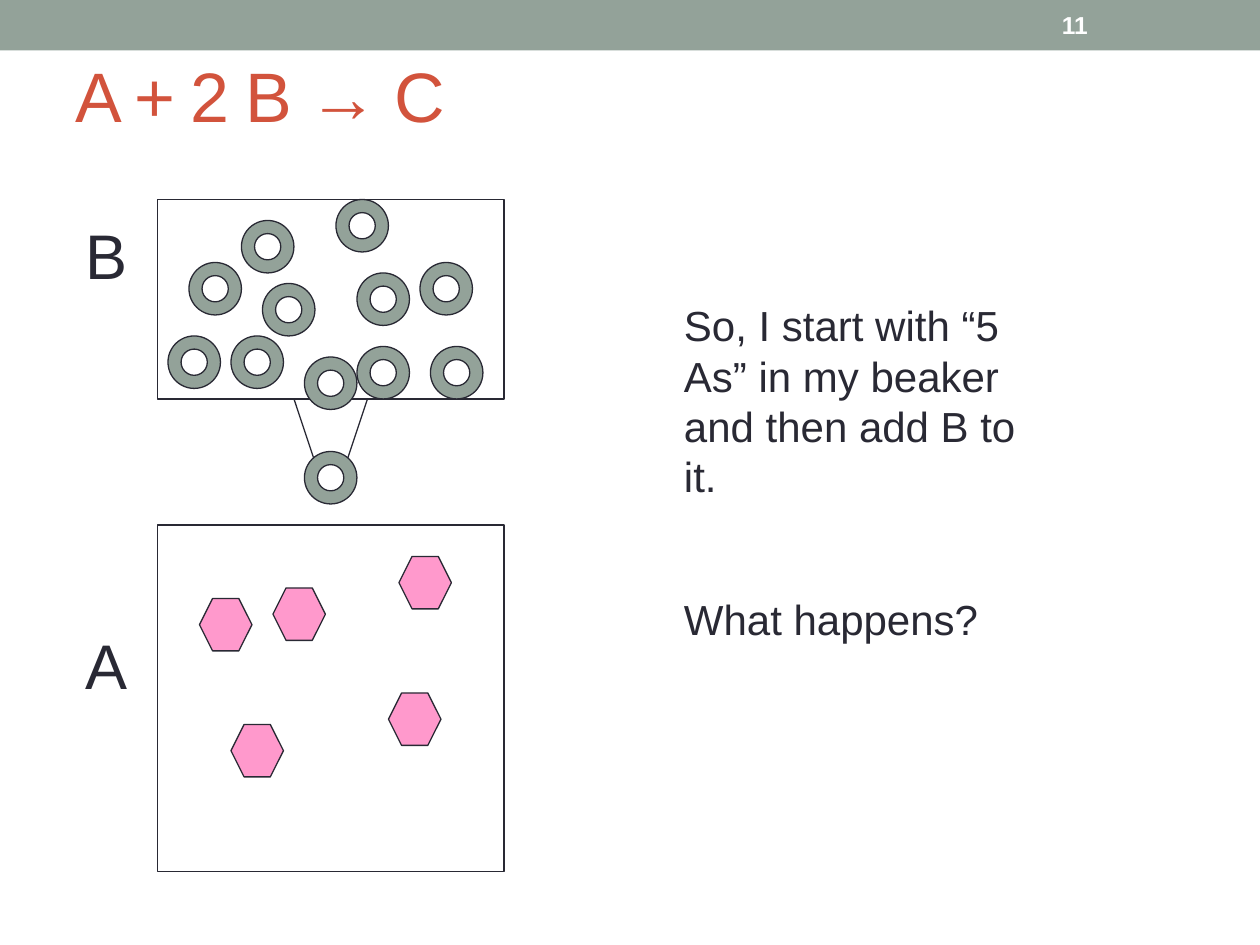
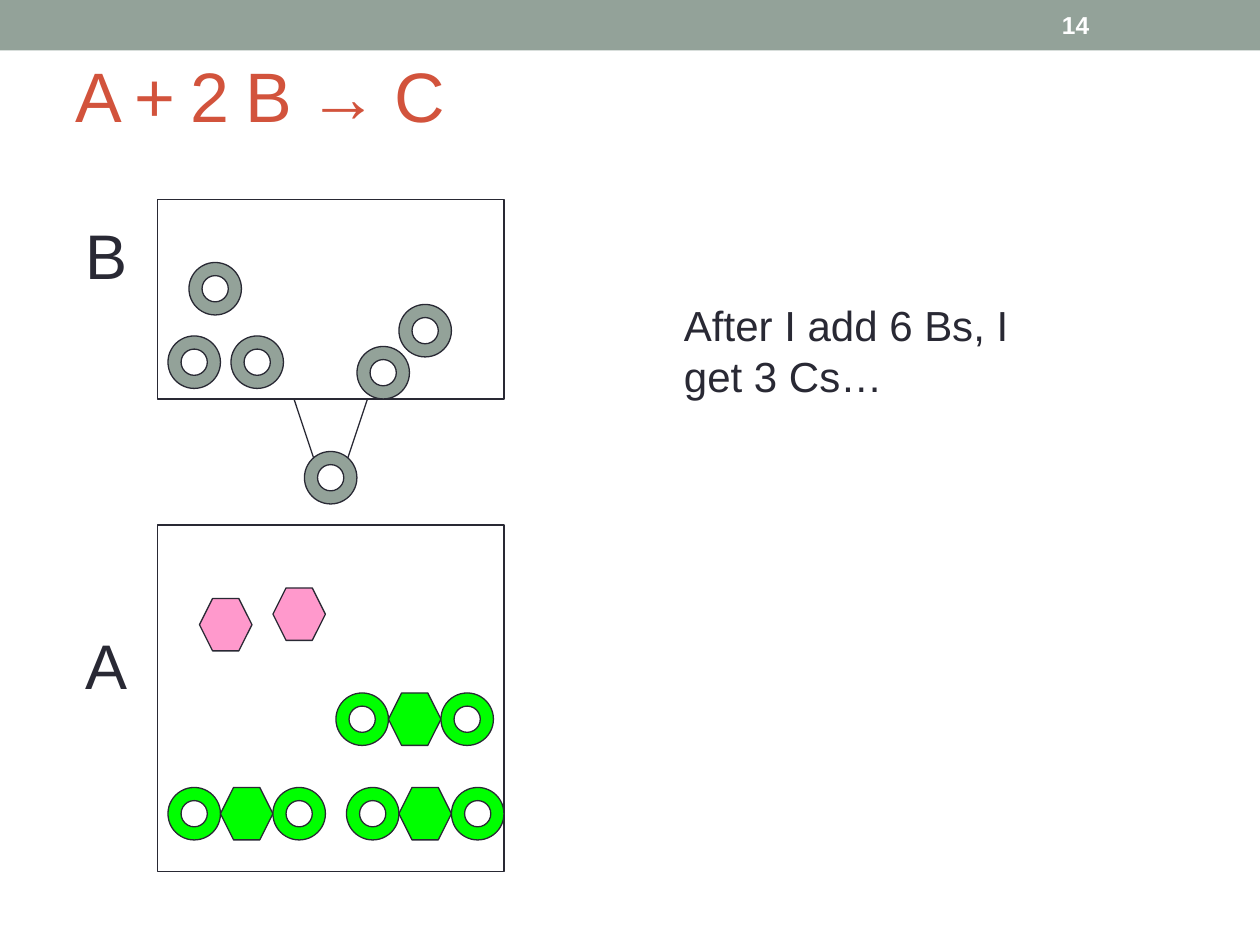
from pptx import Presentation
from pptx.dml.color import RGBColor
from pptx.enum.shapes import MSO_SHAPE
from pptx.enum.text import MSO_ANCHOR
from pptx.util import Inches, Pt

COLORS = {
    "band": "93A299",
    "title": "D2533C",
    "ink": "292934",
    "reactant_a": "FF99CC",
    "reactant_b": "93A299",
    "product_c": "00FF00",
    "white": "FFFFFF",
}
GRID = 12
PARTICLE = 5

SLIDES = [
    {
        "number": "11",
        "text": ["So, I start with “5 As” in my beaker and then add B to it.", "What happens?"],
        "b": [(25, 27), (16, 32), (41, 33), (22, 32), (40, 25), (29, 34),
              (34, 33), (18, 25), (32, 19), (23, 21), (34, 26)],
        "a": [(19, 57), (26, 56), (38, 53), (22, 69), (37, 66)],
        "c": [],
    },
    {
        "number": "14",
        "text": ["After I add 6 Bs, I get 3 Cs…"],
        "b": [(16, 32), (22, 32), (34, 33), (18, 25), (38, 29)],
        "a": [(19, 57), (26, 56)],
        "c": [(16, 75), (32, 66), (33, 75)],
    },
]


def add_figure(slide, kind, x, y, w, h, fill=None, line="ink"):
    sp = slide.shapes.add_shape(kind, *[Inches(v / GRID) for v in (x, y, w, h)])
    sp.shadow.inherit = False
    if fill:
        sp.fill.solid()
        sp.fill.fore_color.rgb = RGBColor.from_string(COLORS[fill])
    else:
        sp.fill.background()
    if line:
        sp.line.color.rgb = RGBColor.from_string(COLORS[line])
        sp.line.width = Pt(0.75)
    else:
        sp.line.fill.background()
    return sp


def add_text(slide, lines, x, y, w, h, size, color, middle=False):
    tf = slide.shapes.add_textbox(Inches(x), Inches(y), Inches(w), Inches(h)).text_frame
    tf.word_wrap = True
    if middle:
        tf.vertical_anchor = MSO_ANCHOR.MIDDLE
    tf.text = "\n".join(lines)
    for p in tf.paragraphs:
        if not middle:
            p.line_spacing = Pt(size * 1.2)
        for r in p.runs:
            r.font.name = "Arial"
            r.font.size = Pt(size)
            r.font.color.rgb = RGBColor.from_string(COLORS[color])
    return tf


prs = Presentation()
prs.slide_width = Inches(10)
prs.slide_height = Inches(7.5)

for data in SLIDES:
    s = prs.slides.add_slide(prs.slide_layouts[6])
    add_figure(s, MSO_SHAPE.RECTANGLE, 0, 0, 120, 4.8, "band", None)
    title = add_text(s, ["A + 2 B → C"], 0.5, 0.25, 8.77, 1, 40, "title", True)
    for r in title.paragraphs[0].runs:
        r.font._element.set("spc", "-100")

    add_figure(s, MSO_SHAPE.RECTANGLE, 15, 19, 33, 19)
    add_figure(s, MSO_SHAPE.RECTANGLE, 15, 50, 33, 33)
    funnel = s.shapes.build_freeform(28, 38, scale=Inches(1) / GRID)
    funnel.add_line_segments([(29.75, 44), (33.25, 44), (35, 38)])
    sp = funnel.convert_to_shape()
    sp.shadow.inherit = False
    sp.fill.background()
    sp.line.color.rgb = RGBColor.from_string(COLORS["ink"])
    sp.line.width = Pt(0.75)

    add_text(s, ["B"], 0.58, 1.67, 0.42, 0.7, 36, "ink")
    add_text(s, ["A"], 0.58, 4.92, 0.42, 0.7, 36, "ink")

    falling_b = (29, 43)
    for x, y in data["b"] + [falling_b]:
        add_figure(s, MSO_SHAPE.DONUT, x, y, PARTICLE, PARTICLE, "reactant_b")
    for x, y in data["a"]:
        add_figure(s, MSO_SHAPE.HEXAGON, x, y, PARTICLE, PARTICLE, "reactant_a")
    for x, y in data["c"]:
        for i, kind in enumerate([MSO_SHAPE.DONUT, MSO_SHAPE.HEXAGON, MSO_SHAPE.DONUT]):
            add_figure(s, kind, x + i * PARTICLE, y, PARTICLE, PARTICLE, "product_c")

    height = 2.9 if len(data["text"]) > 1 else 0.9
    tf = add_text(s, data["text"], 5.33, 2.33, 2.92, height, 24, "ink")
    for p in tf.paragraphs[1:]:
        p.space_before = Pt(52.8)

    number = add_text(s, [data["number"]], 8.33, 0.02, 1.17, 0.36, 14, "white", True)
    number.paragraphs[0].runs[0].font.bold = True

prs.save("out.pptx")
